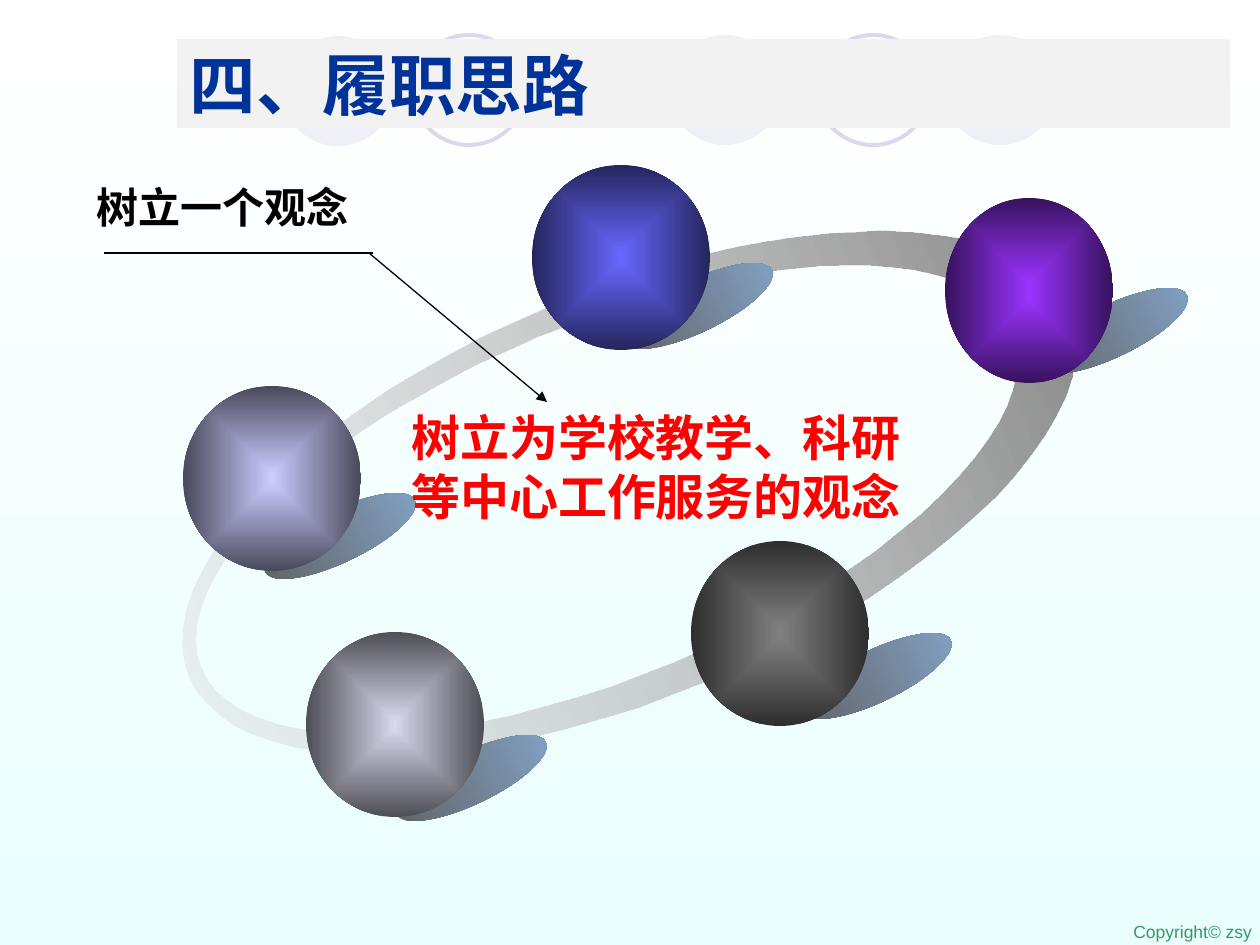
import math

from lxml import etree
from pptx import Presentation
from pptx.dml.color import RGBColor
from pptx.enum.shapes import MSO_CONNECTOR, MSO_SHAPE
from pptx.enum.text import MSO_ANCHOR, MSO_AUTO_SIZE, PP_ALIGN
from pptx.oxml import parse_xml
from pptx.oxml.ns import nsdecls, qn
from pptx.util import Emu, Pt

SCALE = 914400 / 126
OVAL = MSO_SHAPE.OVAL
STRAIGHT = MSO_CONNECTOR.STRAIGHT
LEFT = PP_ALIGN.LEFT
MIDDLE, TOP = MSO_ANCHOR.MIDDLE, MSO_ANCHOR.TOP
FIT_SHAPE, NO_FIT = MSO_AUTO_SIZE.SHAPE_TO_FIT_TEXT, MSO_AUTO_SIZE.NONE
CJK_FONT = "Noto Sans CJK SC"

COLORS = {
    "white": "FFFFFF", "mint": "EAFEFD", "lilac": "D9D8EC",
    "banner": "F2F2F2", "navy": "003399", "red": "FF0000",
    "black": "000000", "green": "339966",
    "ring_light": "E2E2E2", "gray": "808080", "gray_edge": "2E2E2E",
    "shade_dark": "5F5F5F", "shade_blue": "84A5CA",
    "blue": "6767FF", "blue_edge": "25255C",
    "lavender": "CCCCFF", "lavender_edge": "49495C",
    "lilac_edge": "4E4E55",
    "purple": "9933FF", "purple_edge": "37125C",
}

DISCS = [(669, 35), (944, 35), (282, 36)]
HOOPS = [(817, 35), (413, 35)]
SHADOWS = [(614, 280), (1029, 305), (388, 752), (793, 650), (257, 510)]
ORBS = [
    (532, 165, 178, "blue"),
    (183, 386, 178, "lavender"),
    (306, 632, 178, "lilac"),
    (691, 541, 178, "gray"),
    (945, 198, 168, "purple"),
]


def px(value):
    return Emu(round(value * SCALE))


def rgb(name):
    return RGBColor.from_string(COLORS[name])


def set_alpha(color, percent):
    etree.SubElement(color, qn("a:alpha")).set("val", str(percent * 1000))


def set_gradient(fill, owner, first, last, angle=0):
    fill.gradient()
    fill.gradient_angle = angle
    for stop, name in zip(fill.gradient_stops, (first, last)):
        stop.color.rgb = rgb(name)
    return owner.find(".//" + qn("a:gradFill"))


def add_oval(page, left, top, width, height, rotation=0):
    oval = page.shapes.add_shape(OVAL, px(left), px(top), px(width), px(height))
    oval.shadow.inherit = False
    oval.line.fill.background()
    oval.rotation = rotation
    return oval


def add_disc(page, left, top):
    disc = add_oval(page, left, top, 112, 110)
    disc.fill.solid()
    disc.fill.fore_color.rgb = rgb("lilac")
    set_alpha(disc.element.spPr.find(".//" + qn("a:srgbClr")), 40)


def add_hoop(page, left, top):
    hoop = add_oval(page, left, top, 112, 110)
    hoop.fill.background()
    hoop.line.color.rgb = rgb("lilac")
    hoop.line.width = Pt(2.25)


def add_shadow(page, left, top):
    shadow = add_oval(page, left, top, 166, 52, 334.3)
    set_gradient(shadow.fill, shadow.element.spPr, "shade_dark", "shade_blue")


def add_orb(page, left, top, width, color):
    orb = add_oval(page, left, top, width, 185)
    gradient = set_gradient(orb.fill, orb.element.spPr, color, color + "_edge")
    center = parse_xml(
        f'<a:path {nsdecls("a")} path="shape">'
        '<a:fillToRect l="50000" t="50000" r="50000" b="50000"/></a:path>'
    )
    gradient.replace(gradient.find(qn("a:lin")), center)


def ellipse_points(center_x, center_y, radius_x, radius_y, direction):
    angles = [direction * math.tau * step / 80 for step in range(80)]
    return [(center_x + radius_x * math.cos(angle), center_y + radius_y * math.sin(angle))
            for angle in angles]


def add_ring(page):
    outer = ellipse_points(629, 493, 476, 203, 1)
    inner = ellipse_points(606, 490, 438, 176, -1)
    builder = page.shapes.build_freeform(*outer[0], scale=SCALE)
    builder.add_line_segments(outer[1:], close=True)
    builder.move_to(*inner[0])
    builder.add_line_segments(inner[1:], close=True)
    ring = builder.convert_to_shape()
    ring.shadow.inherit = False
    ring.line.fill.background()
    ring.rotation = 337.4
    gradient = set_gradient(ring.fill, ring.element.spPr, "ring_light", "gray")
    set_alpha(gradient.find(".//" + qn("a:srgbClr")), 36)


def write_text(box, text, color, frame_format, font_format):
    frame = box.text_frame
    for name, value in frame_format.items():
        setattr(frame, name, value)
    para = frame.paragraphs[0]
    para.alignment = LEFT
    span = para.add_run()
    span.text = text
    for name, value in font_format.items():
        setattr(span.font, name, value)
    span.font.color.rgb = rgb(color)
    etree.SubElement(span.font._element, qn("a:ea")).set("typeface", CJK_FONT)


def add_label(page, place, text, color, font, size, bold=True, wrap=True):
    box = page.shapes.add_textbox(*map(px, place))
    write_text(
        box, text, color,
        {"word_wrap": wrap, "auto_size": FIT_SHAPE, "vertical_anchor": TOP},
        {"name": font, "size": Pt(size), "bold": bold},
    )


def add_title(page, text):
    title = page.shapes.title
    place = {"left": 177, "top": 39, "width": 1053, "height": 89}
    for name, value in place.items():
        setattr(title, name, px(value))
    title.fill.solid()
    title.fill.fore_color.rgb = rgb("banner")
    write_text(
        title, text, "navy",
        {"word_wrap": True, "auto_size": NO_FIT, "vertical_anchor": MIDDLE},
        {"name": CJK_FONT, "size": Pt(38), "bold": True},
    )
    page.shapes._spTree.append(title.element)


def add_line(page, ends, arrow=False):
    line = page.shapes.add_connector(STRAIGHT, *map(px, ends))
    line.line.color.rgb = rgb("black")
    line.line.width = Pt(0.75)
    if arrow:
        etree.SubElement(line.line._get_or_add_ln(), qn("a:tailEnd")).set("type", "triangle")
    etree.SubElement(line._element.spPr, qn("a:effectLst"))


def main():
    deck = Presentation()
    deck.slide_width, deck.slide_height = px(1260), px(945)
    page = deck.slides.add_slide(deck.slide_layouts[5])
    set_gradient(page.background.fill, page.element, "white", "mint", 270)

    for disc in DISCS:
        add_disc(page, *disc)
    for hoop in HOOPS:
        add_hoop(page, *hoop)
    add_label(page, (1121, 915, 144, 34), "Copyright© zsy", "green", "Arial", 10,
              bold=False, wrap=False)
    add_ring(page)
    for shadow in SHADOWS:
        add_shadow(page, *shadow)
    for orb in ORBS:
        add_orb(page, *orb)
    add_label(page, (399, 401, 536, 130), "树立为学校教学、科研等中心工作服务的观念",
              "red", "Arial", 28)
    add_line(page, (369, 253, 547, 402), arrow=True)
    add_line(page, (373, 253, 104, 253))
    add_label(page, (84, 175, 321, 63), "树立一个观念", "black", "DejaVu Sans", 24)
    add_title(page, "四、履职思路")
    deck.save("out.pptx")


if __name__ == "__main__":
    main()
